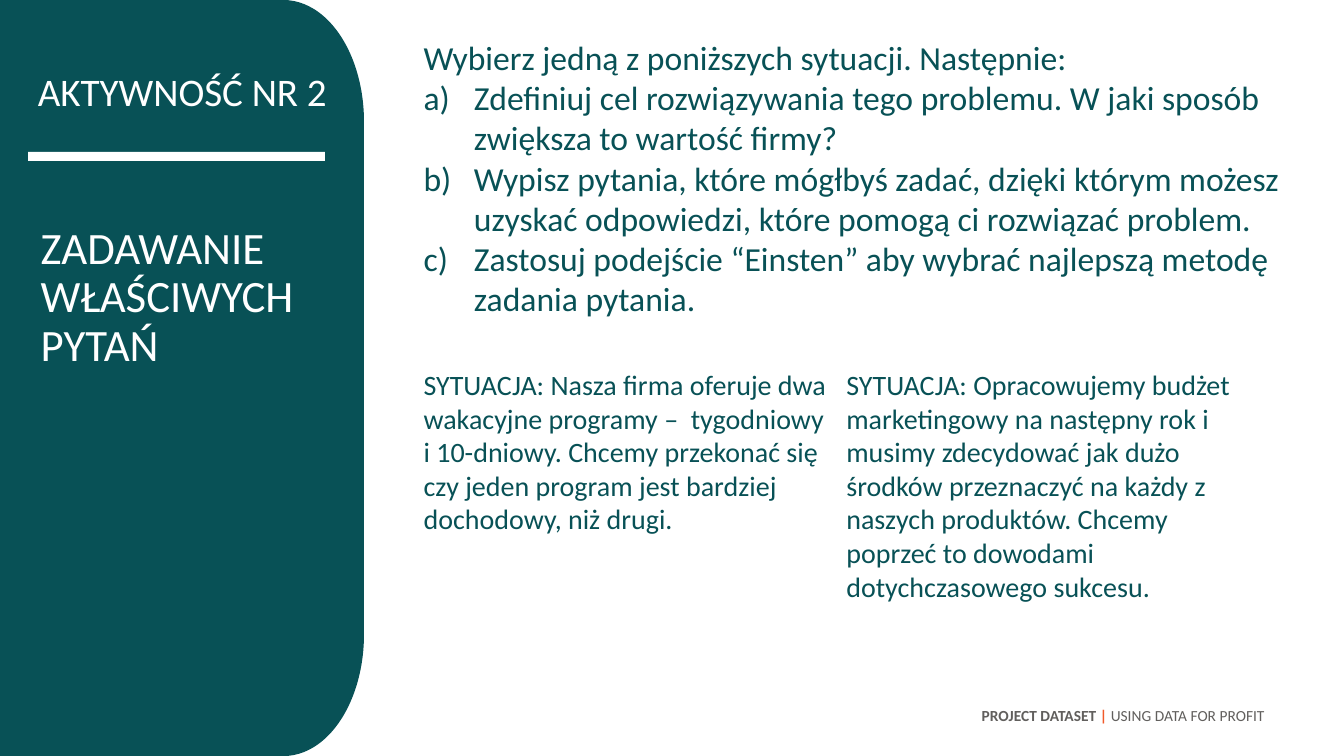
from pptx import Presentation
from pptx.dml.color import RGBColor as Rgb
from pptx.enum.shapes import MSO_SHAPE as Kind
from pptx.enum.text import PP_ALIGN as Align
from pptx.oxml.ns import qn
from pptx.util import Pt
from lxml.etree import SubElement as Sub

WIDE, HIGH = 960, 540
TEAL, WHITE, GRAY, ORANGE = "085156", "FFFFFF", "615F5D", "F15A2A"


def paint(hue):
    return Rgb.from_string(hue)


def shape(slide, kind, box, hue, turn=0):
    item = slide.shapes.add_shape(kind, *map(Pt, box))
    item.shadow.inherit = False
    item.fill.solid()
    item.fill.fore_color.rgb = paint(hue)
    item.line.fill.background()
    item.rotation = turn


def letter(par, indent=36):
    """Number a paragraph a), b), c) with a hanging indent."""
    props = par._p.get_or_add_pPr()
    props.set("marL", str(Pt(indent)))
    props.set("indent", str(-Pt(indent)))
    Sub(props, qn("a:buFont"), typeface="+mj-lt")
    Sub(props, qn("a:buAutoNum"), type="alphaLcParenR")


def text(slide, box, lines, size, hue=TEAL, align=Align.LEFT,
         spacing=None, before=0, listed=False):
    """Add paragraphs; a line is a string or a list of (words, hue, bold)."""
    frame = slide.shapes.add_textbox(*map(Pt, box)).text_frame
    frame.word_wrap = True
    for i, line in enumerate(lines):
        par = frame.add_paragraph() if i else frame.paragraphs[0]
        par.alignment = align
        par.space_before = Pt(before)
        if spacing:
            par.line_spacing = spacing
        if listed and i:
            letter(par)
        parts = [(line, hue, False)] if isinstance(line, str) else line
        for words, color, bold in parts:
            run = par.add_run()
            run.text = words
            run.font.name = "Calibri"
            run.font.size = Pt(size)
            run.font.bold = bold
            run.font.color.rgb = paint(color)


def panel(slide, left, top, width, height):
    """Draw the side band with rounded right corners, and its titles."""
    cap = 115
    edge = left + width - cap / 2
    shape(slide, Kind.RECTANGLE, (left, top, edge - left, height), TEAL)
    shape(slide, Kind.FLOWCHART_TERMINATOR,
          (edge - height / 2, top + (height - cap) / 2, height, cap), TEAL, 270)
    shape(slide, Kind.RECTANGLE, (left + 20, top + 108.5, 212, 6.5), WHITE)
    text(slide, (left + 20, top + 54, 240, 55), ["AKTYWNOŚĆ NR 2"],
         27.9, WHITE, spacing=0.7, before=10)
    text(slide, (left + 22, top + 157.5, 209.5, 286),
         ["ZADAWANIE WŁAŚCIWYCH PYTAŃ"], 32, WHITE, spacing=0.9, before=10)


def tasks(slide, left, top, width, height):
    text(slide, (left, top, width, height), [
        "Wybierz jedną z poniższych sytuacji. Następnie:",
        "Zdefiniuj cel rozwiązywania tego problemu. W jaki sposób zwiększa "
        "to wartość firmy?",
        "Wypisz pytania, które mógłbyś zadać, dzięki którym możesz uzyskać "
        "odpowiedzi, które pomogą ci rozwiązać problem.",
        "Zastosuj podejście “Einsten” aby wybrać najlepszą metodę zadania "
        "pytania.",
    ], 24, listed=True)


def cases(slide, left, top, width, height):
    """Set the two situations side by side."""
    stories = [
        "SYTUACJA: Nasza firma oferuje dwa wakacyjne programy –  tygodniowy "
        "i 10-dniowy. Chcemy przekonać się czy jeden program jest bardziej "
        "dochodowy, niż drugi.",
        "SYTUACJA: Opracowujemy budżet marketingowy na następny rok i musimy "
        "zdecydować jak dużo środków przeznaczyć na każdy z naszych "
        "produktów. Chcemy poprzeć to dowodami dotychczasowego sukcesu.",
    ]
    col = width / len(stories)
    for i, story in enumerate(stories):
        text(slide, (left + i * col, top, col, height), [story], 20)


def footer(slide, left, top, width, height):
    text(slide, (left, top, width, height), [[
        ("PROJECT DATASET ", GRAY, True),
        ("|", ORANGE, True),
        (" USING DATA FOR PROFIT", GRAY, False),
    ]], 11, align=Align.RIGHT)


def main():
    deck = Presentation()
    deck.slide_width, deck.slide_height = Pt(WIDE), Pt(HIGH)
    slide = deck.slides.add_slide(deck.slide_layouts[6])
    panel(slide, 0, 0, 260, HIGH)
    footer(slide, 41, 500.5, 869.5, 32)
    tasks(slide, 295.5, 22.5, 664.5, 211)
    cases(slide, 295.5, 259, 604, 177)
    deck.save("out.pptx")


if __name__ == "__main__":
    main()
